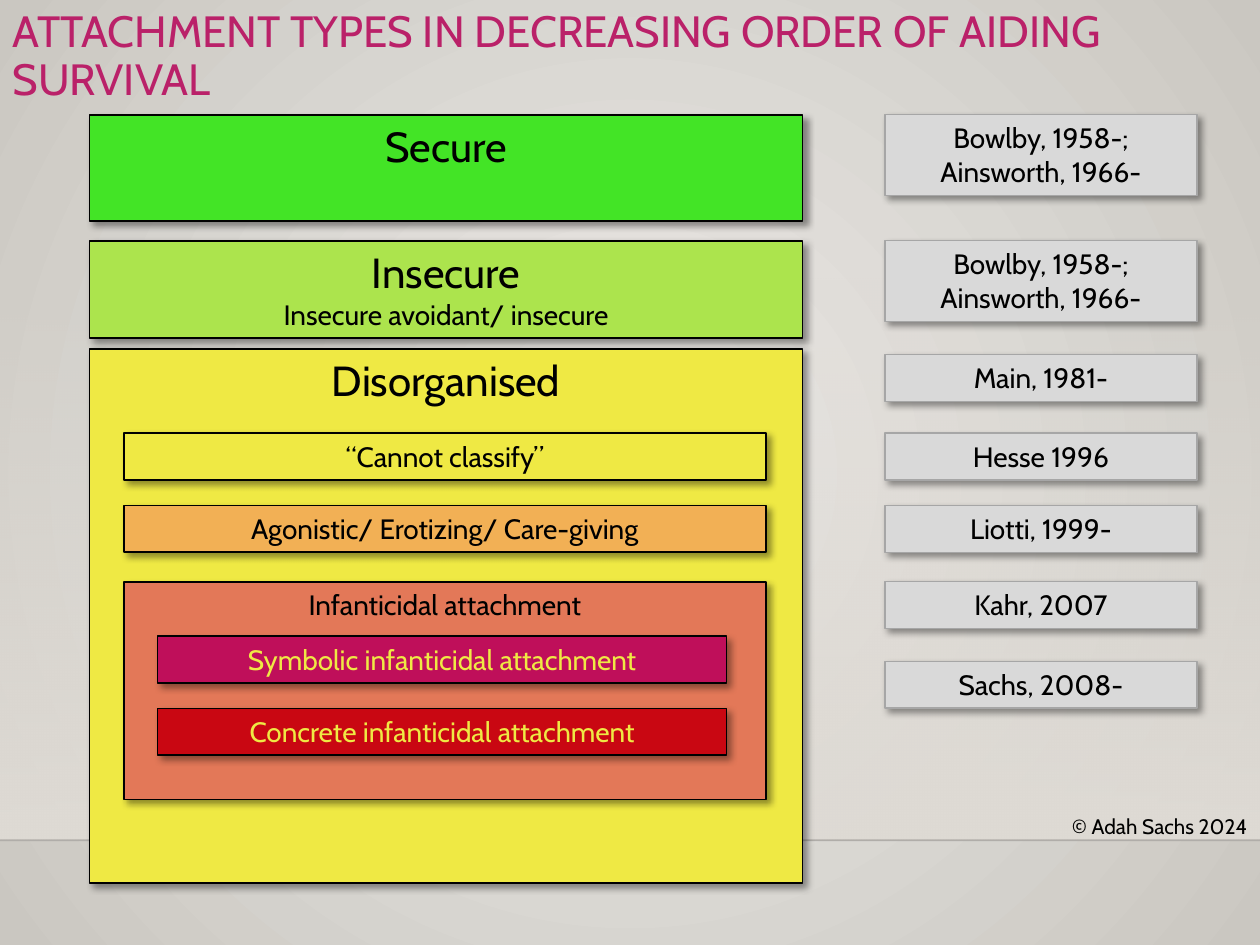
import pptx
import pptx.util
import pptx.dml.color
import pptx.enum.shapes
import pptx.enum.text
import pptx.oxml
import pptx.oxml.ns
from lxml import etree

Pt = pptx.util.Pt
Color = pptx.dml.color.RGBColor
Align = pptx.enum.text.PP_ALIGN
Anchor = pptx.enum.text.MSO_ANCHOR
RECT = pptx.enum.shapes.MSO_SHAPE.RECTANGLE
qn = pptx.oxml.ns.qn

FONT = "Cabin"
BLACK = Color(0x00, 0x00, 0x00)
INK = Color(0x00, 0x00, 0x01)
PINK = Color(0xBA, 0x21, 0x69)
PALE = Color(0xEC, 0xEA, 0xE7)
STONE = Color(0xCA, 0xC7, 0xC1)
SAND = Color(0xDF, 0xDB, 0xD5)
GREEN = Color(0x43, 0xE4, 0x26)
LIME = Color(0xAC, 0xE4, 0x4D)
YELLOW = Color(0xEF, 0xE9, 0x44)
ORANGE = Color(0xF2, 0xB0, 0x55)
CORAL = Color(0xE3, 0x78, 0x58)
RED = Color(0xC9, 0x07, 0x12)
PLUM = Color(0xBF, 0x0F, 0x5A)
SILVER = Color(0xD9, 0xD9, 0xD9)
GREY = Color(0xA6, 0xA6, 0xA6)

ROW = 26.8
SHADOW = (
    '<a:effectLst xmlns:a="http://schemas.openxmlformats.org/drawingml/2006/main">'
    '<a:outerShdw blurRad="50800" dist="38100" dir="2700000" algn="tl" rotWithShape="0">'
    '<a:srgbClr val="000000"><a:alpha val="40000"/></a:srgbClr>'
    "</a:outerShdw></a:effectLst>"
)


def fade(node, share):
    """Set the opacity of the first colour under a node, in percent."""
    tint = next(node.iter(qn("a:srgbClr")))
    etree.SubElement(tint, qn("a:alpha")).set("val", str(share * 1000))


def blend(fill, first, last):
    """Give a fill a gradient of two colours."""
    fill.gradient()
    for stop, tint, place in zip(fill.gradient_stops, (first, last), (0, 1)):
        stop.color.rgb = tint
        stop.position = place


def style(para, size, color, align):
    """Format a whole paragraph."""
    para.alignment = align
    para.font.name = FONT
    para.font.size = Pt(size)
    para.font.color.rgb = color


def block(slide, box, lines, fill, line=BLACK, width=1, color=BLACK):
    """Draw a shadowed rectangle holding lines of (text, size)."""
    shape = slide.shapes.add_shape(RECT, *map(Pt, box))
    shape.fill.solid()
    shape.fill.fore_color.rgb = fill
    shape.line.color.rgb = line
    shape.line.width = Pt(width)
    shape._element.spPr.append(pptx.oxml.parse_xml(SHADOW))
    frame = shape.text_frame
    frame.word_wrap = True
    frame.vertical_anchor = Anchor.TOP
    frame.text = "\n".join(text for text, size in lines)
    for para, (text, size) in zip(frame.paragraphs, lines):
        style(para, size, color, Align.CENTER)


def backdrop(slide, width, level):
    """Paint the background, the floor line and the glow above it."""
    blend(slide.background.fill, PALE, STONE)
    grad = next(slide._element.iter(qn("a:gradFill")))
    grad.remove(grad.find(qn("a:lin")))
    ring = etree.SubElement(grad, qn("a:path"))
    ring.set("path", "circle")
    focus = etree.SubElement(ring, qn("a:fillToRect"))
    for side in "ltrb":
        focus.set(side, "50000")

    top = 158.4
    glow = slide.shapes.add_shape(RECT, 0, Pt(top), Pt(width), Pt(level - top))
    glow.shadow.inherit = False
    glow.line.fill.background()
    blend(glow.fill, SAND, SAND)
    glow.fill.gradient_angle = 270
    fade(glow._element.spPr, 0)

    floor = slide.shapes.add_connector(
        pptx.enum.shapes.MSO_CONNECTOR.STRAIGHT, 0, Pt(level), Pt(width), Pt(level)
    )
    floor.line.color.rgb = INK
    floor.line.width = Pt(1)
    fade(floor._element.spPr, 20)
    etree.SubElement(floor._element.spPr, qn("a:effectLst"))


def heading(slide, box):
    """Place and format the title."""
    title = slide.shapes.title
    title.left, title.top, title.width, title.height = map(Pt, box)
    frame = title.text_frame
    frame.text = "ATTACHMENT TYPES IN DECREASING ORDER OF AIDING SURVIVAL"
    frame.word_wrap = True
    frame.auto_size = pptx.enum.text.MSO_AUTO_SIZE.NONE
    frame.vertical_anchor = Anchor.MIDDLE
    para = frame.paragraphs[0]
    para.line_spacing = 0.9
    style(para, 25, PINK, Align.LEFT)


def credit(slide, box):
    """Write the copyright line."""
    frame = slide.shapes.add_textbox(*map(Pt, box)).text_frame
    frame.word_wrap = True
    frame.text = "© Adah Sachs 2024"
    style(frame.paragraphs[0], 12, BLACK, Align.RIGHT)


def types(slide, left, top, width):
    """Stack the attachment types, nesting the lesser ones."""
    def nest(depth, trim, drop, high, *rest):
        inset = 19.5 * depth
        box = (left + inset, top + drop, width - trim, high)
        block(slide, box, *rest)

    nest(0, 0, 0, 60.7, [("Secure", 24)], GREEN)
    nest(0, 0, 72, 55.6,
         [("Insecure", 24), ("Insecure avoidant/ insecure", 16)], LIME)
    nest(0, 0, 133.8, 305.2, [("Disorganised", 24)], YELLOW)
    nest(1, 40.4, 182, ROW, [("“Cannot classify”", 16)], YELLOW)
    nest(1, 40.4, 223.3, ROW,
         [("Agonistic/ Erotizing/ Care-giving", 16)], ORANGE)
    nest(1, 40.4, 266.9, 124.5, [("Infanticidal attachment", 16)], CORAL)
    for drop, word, fill in ((298, "Symbolic", PLUM), (339.2, "Concrete", RED)):
        text = f"{word} infanticidal attachment"
        nest(2, 82.5, drop, ROW, [(text, 16)], fill, BLACK, 0.75, YELLOW)


def sources(slide, left, top, width):
    """Stack the authors beside the types they described."""
    pair = "Bowlby, 1958-; Ainsworth, 1966-"
    rows = [
        (0, 46.2, pair), (72, 46.2, pair), (137, ROW, "Main, 1981-"),
        (182, ROW, "Hesse 1996"), (223.3, ROW, "Liotti, 1999-"),
        (266.9, ROW, "Kahr, 2007"), (312.4, ROW, "Sachs, 2008-"),
    ]
    for drop, high, text in rows:
        box = (left, top + drop, width, high)
        block(slide, box, [(text, 16)], SILVER, GREY, 0.75)


def main():
    """Build the slide and save it."""
    deck = pptx.Presentation()
    deck.slide_width, deck.slide_height = Pt(720), Pt(540)
    slide = deck.slides.add_slide(deck.slide_layouts[5])
    backdrop(slide, 720, 480.2)
    credit(slide, (532, 461.5, 188, 21.6))
    heading(slide, (0, 0, 648, 65.5))
    types(slide, 51.2, 65.5, 407.5)
    sources(slide, 505.7, 65.5, 178.3)
    deck.save("out.pptx")


if __name__ == "__main__":
    main()
